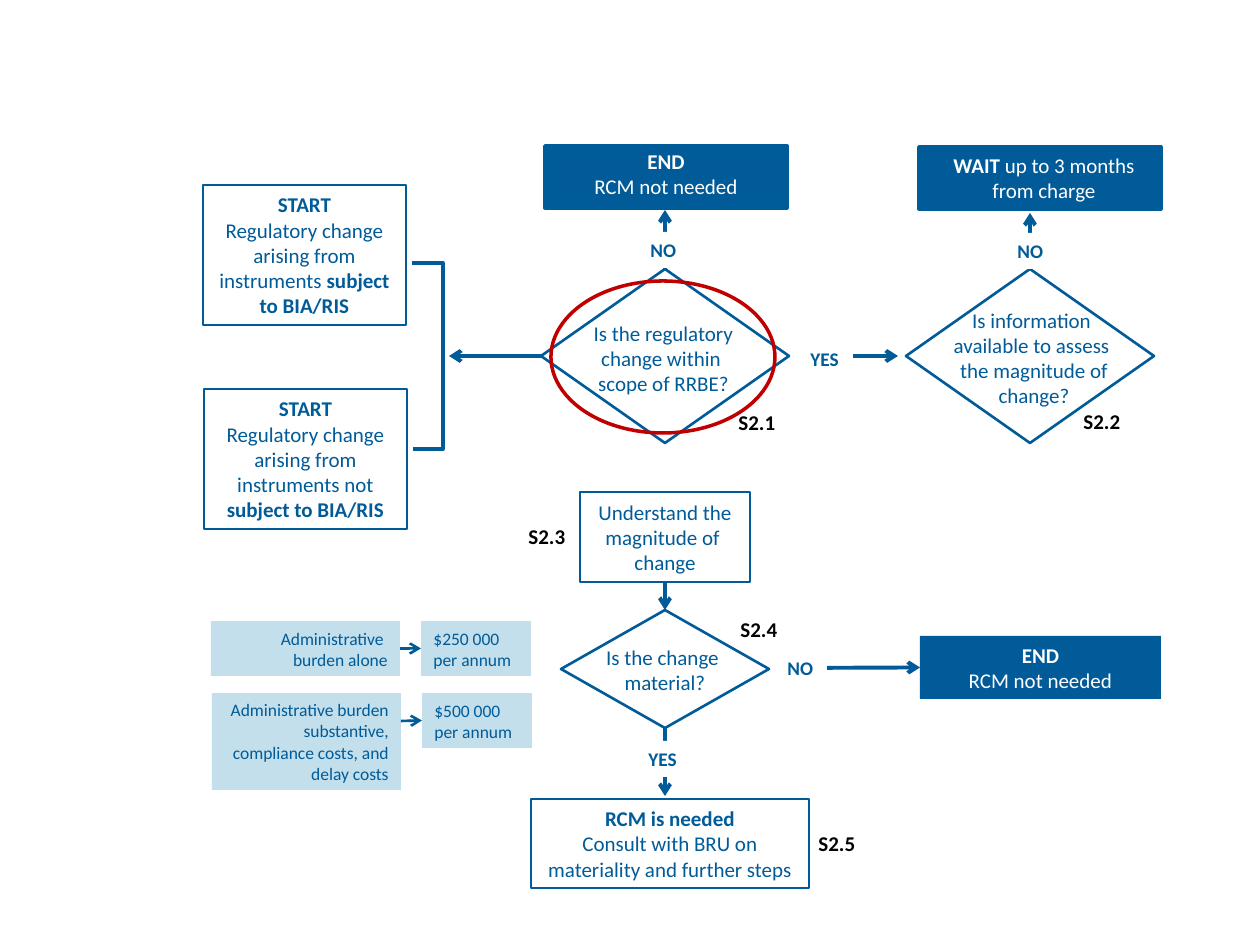
import copy

import lxml.etree
import pptx
import pptx.dml.color
import pptx.enum.shapes
import pptx.enum.text
import pptx.oxml.ns
import pptx.util

NAVY = pptx.dml.color.RGBColor(0x01, 0x5B, 0x99)
BLUE = pptx.dml.color.RGBColor(0x00, 0x5B, 0x99)
PALE = pptx.dml.color.RGBColor(0xC3, 0xDF, 0xEB)
RED = pptx.dml.color.RGBColor(0xC0, 0x00, 0x00)
WHITE = pptx.dml.color.RGBColor(0xFF, 0xFF, 0xFF)
BLACK = pptx.dml.color.RGBColor(0x00, 0x00, 0x00)
SHAPE = pptx.enum.shapes.MSO_SHAPE
LINK = pptx.enum.shapes.MSO_CONNECTOR
ALIGN = pptx.enum.text.PP_ALIGN
ANCHOR = pptx.enum.text.MSO_ANCHOR
TOP, LEFT, BOTTOM, RIGHT = range(4)


def px(length):
    return pptx.util.Emu(round(length * 914400 / 126))


def tag(name):
    return pptx.oxml.ns.qn(name)


class Flowchart:
    """Draws flowchart elements in one style on the current slide."""

    font = "Calibri"

    def __init__(self, page):
        self.page = page

    def fill_words(self, box, paragraphs, size=12, color=BLUE, align=ALIGN.CENTER):
        frame = box.text_frame
        frame.word_wrap = True
        for index, runs in enumerate(paragraphs):
            para = frame.add_paragraph() if index else frame.paragraphs[0]
            para.alignment = align
            for text, bold in runs:
                for row, line in enumerate(text.split("\n")):
                    if row:
                        para.add_line_break()
                        para._p[-1].append(copy.deepcopy(span._r.rPr))
                    if not line:
                        continue
                    span = para.add_run()
                    span.text = line
                    span.font.name = self.font
                    span.font.size = pptx.util.Pt(size)
                    span.font.bold = bold
                    span.font.color.rgb = color

    def shape(self, kind, frame, fill=None, line=None, weight=1.5):
        box = self.page.shapes.add_shape(kind, *map(px, frame))
        box.shadow.inherit = False
        if fill is None:
            box.fill.background()
        else:
            box.fill.solid()
            box.fill.fore_color.rgb = fill
        if line is None:
            box.line.fill.background()
        else:
            box.line.color.rgb = line
            box.line.width = pptx.util.Pt(weight)
        return box

    def step(self, frame, paragraphs, fill=None, line=NAVY, **style):
        box = self.shape(SHAPE.RECTANGLE, frame, fill, line)
        box.text_frame.vertical_anchor = ANCHOR.MIDDLE
        self.fill_words(box, paragraphs, **style)
        return box

    def text(self, frame, runs, **style):
        box = self.page.shapes.add_textbox(*map(px, frame))
        self.fill_words(box, [runs], **style)

    def decision(self, frame, words_frame, words):
        box = self.shape(SHAPE.FLOWCHART_DECISION, frame, WHITE, NAVY)
        self.text(words_frame, [(words, False)])
        return box

    def answer(self, word, frame):
        box = self.step(frame, [[(word, True)]], WHITE, None, size=11, align=ALIGN.LEFT)
        box.text_frame.margin_right = 0

    def connector(self, start, end, weight=2.25, kind=LINK.STRAIGHT):
        line = self.page.shapes.add_connector(kind, *map(px, start + end))
        line.line.color.rgb = NAVY
        line.line.width = pptx.util.Pt(weight)
        lxml.etree.SubElement(line._element.spPr, tag("a:effectLst"))
        return line

    def arrow(self, start, end, weight=2.25, source=None, target=None):
        line = self.connector(start, end, weight)
        outline = line._element.spPr.find(tag("a:ln"))
        head = lxml.etree.SubElement(outline, tag("a:tailEnd"))
        head.set("type", "arrow")
        if source:
            line.begin_connect(*source)
        if target:
            line.end_connect(*target)

    def bracket(self, start, end, reach):
        line = self.connector(start, end, kind=LINK.ELBOW)
        geometry = line._element.spPr.find(tag("a:prstGeom"))
        guides = geometry.find(tag("a:avLst"))
        if guides is None:
            guides = lxml.etree.SubElement(geometry, tag("a:avLst"))
        guide = lxml.etree.SubElement(guides, tag("a:gd"))
        guide.set("name", "adj1")
        guide.set("fmla", f"val {round(100000 * reach / (end[0] - start[0]))}")


def main():
    deck = pptx.Presentation()
    deck.slide_width, deck.slide_height = px(1260), px(945)
    chart = Flowchart(deck.slides.add_slide(deck.slide_layouts[6]))
    end_words = [("END\n", True), ("RCM not needed", False)]

    for frame, words_frame, words in (
        ((545, 146, 242, 62), (557, 142, 218, 63), end_words),
        ((919, 147, 242, 62), (935, 146, 218, 63),
         [("WAIT", True), (" up to 3 months from charge", False)]),
    ):
        chart.shape(SHAPE.RECTANGLE, frame, NAVY, BLUE, 2)
        chart.text(words_frame, words, color=WHITE)

    scope = chart.decision((541, 269, 248, 174), (549, 314, 229, 89),
                           "Is the regulatory change within \nscope of RRBE?")
    available = chart.decision((906, 269, 248, 174), (920, 301, 228, 115),
                               "Is information \navailable to assess \nthe magnitude of change?")
    material = chart.decision((561, 610, 208, 118), (551, 638, 228, 63),
                              "Is the change \nmaterial?")
    chart.step((531, 799, 278, 89),
               [[("RCM is needed", True)],
                [("Consult with BRU on materiality and further steps", False)]], WHITE)
    understand = chart.step((580, 492, 170, 90),
                            [[("Understand the\nmagnitude of \nchange", False)]], WHITE)
    finish = chart.step((920, 636, 241, 63), [end_words], NAVY, None, color=WHITE)

    for left, top, article in ((203, 185, ""), (204, 389, "not ")):
        chart.step((left, top, 203, 140), [[
            ("START\n", True),
            (f"Regulatory change arising from instruments {article}", False),
            ("subject to BIA/RIS", True)]])

    thresholds = (
        (211, 621, 55, "Administrative \nburden alone", "$250 000\nper annum"),
        (212, 693, 97, "Administrative burden substantive, compliance costs, and delay costs",
         "$500 000\nper annum"),
    )
    for left, top, height, burden, amount in thresholds:
        cost = chart.step((left, top, 189, height), [[(burden, False)]],
                          PALE, None, size=10, align=ALIGN.RIGHT)
        limit = chart.step((left + 210, top, 110, 55), [[(amount, False)]],
                           PALE, None, size=10, align=ALIGN.LEFT)
        level = top + 28
        chart.arrow((left + 189, level), (left + 210, level), 1.5,
                    (cost, RIGHT) if height == 55 else None, (limit, LEFT))

    chart.arrow((665, 728), (665, 796), source=(material, BOTTOM))
    chart.arrow((665, 582), (665, 610), source=(understand, BOTTOM), target=(material, TOP))
    chart.arrow((801, 356), (898, 356))
    chart.arrow((1030, 269), (1030, 213), source=(available, TOP))
    chart.arrow((665, 269), (665, 210), source=(scope, TOP))
    chart.arrow((541, 356), (449, 356), source=(scope, LEFT))
    chart.arrow((779, 668), (920, 668), target=(finish, LEFT))
    chart.bracket((412, 263), (413, 449), 31)
    chart.shape(SHAPE.OVAL, (551, 281, 224, 152), line=RED, weight=2)

    for word, frame in (
        ("NO", (638, 232, 59, 36)),
        ("NO", (1005, 233, 59, 36)),
        ("YES", (636, 741, 63, 36)),
        ("YES", (798, 341, 55, 36)),
        ("NO", (775, 650, 52, 36)),
    ):
        chart.answer(word, frame)

    for name, left, top in (("S2.3", 516, 517), ("S2.1", 726, 403), ("S2.2", 1071, 402),
                            ("S2.4", 728, 610), ("S2.5", 806, 824)):
        chart.text((left, top, 82, 38), [(name, True)], color=BLACK, align=ALIGN.LEFT)

    deck.save("out.pptx")


if __name__ == "__main__":
    main()
